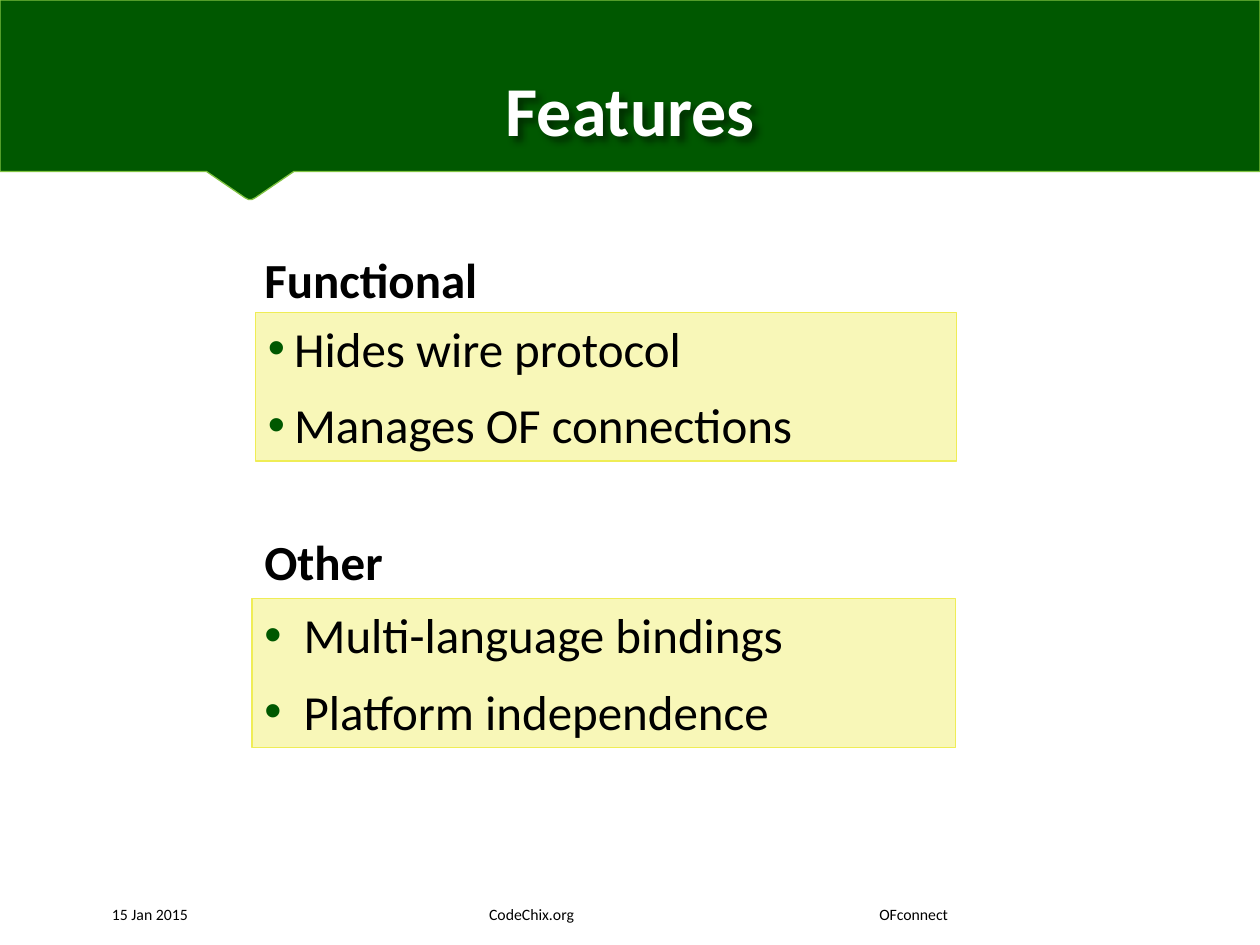
from dataclasses import dataclass

from lxml.etree import SubElement as Sub
from pptx import Presentation
from pptx.dml.color import RGBColor as Rgb
from pptx.enum.shapes import MSO_SHAPE as Kind
from pptx.enum.text import MSO_ANCHOR as Anchor, MSO_AUTO_SIZE as Fit, PP_ALIGN as Align
from pptx.oxml.ns import qn
from pptx.util import Pt

HUES = {"green": "005800", "lime": "80C342", "yellow": "EFED56",
        "white": "FFFFFF", "black": "000000"}
FACE = "Calibri"


@dataclass
class Group:
    head: str
    top: float
    left: float
    box_top: float
    width: float
    indent: float
    items: tuple[str, ...]


GROUPS = (
    Group("Functional", 139, 146, 178.5, 400.5, 15,
          ("Hides wire protocol", "Manages OF connections")),
    Group("Other", 300, 144, 342, 402, 22.5,
          ("Multi-language bindings", "Platform independence")),
)


def hue(name: str) -> Rgb:
    return Rgb.from_string(HUES[name])


def style(para, size: float, tint: str = "black", bold: bool = False) -> None:
    font = para.font
    font.name, font.size, font.bold = FACE, Pt(size), bold
    font.color.rgb = hue(tint)


def paint(shape, fill: str, line: str) -> None:
    shape.shadow.inherit = False
    shape.fill.solid()
    shape.fill.fore_color.rgb = hue(fill)
    shape.line.color.rgb = hue(line)
    shape.line.width = Pt(0.75)


def add_text(slide, text: str, left: float, top: float, width: float, height: float):
    box = slide.shapes.add_textbox(Pt(left), Pt(top), Pt(width), Pt(height))
    box.text_frame.word_wrap = True
    box.text_frame.text = text
    return box


def set_flush(frame) -> None:
    """Remove the insets and seat the text at the bottom."""
    frame.margin_left = frame.margin_right = frame.margin_top = frame.margin_bottom = 0
    frame.vertical_anchor = Anchor.BOTTOM


def add_banner(slide) -> None:
    points = ((0, 0), (0, 98.5), (118, 98.5), (140.5, 113), (142.5, 113.8),
              (144, 113.8), (145.5, 113), (168, 98.5), (720, 98.5))
    pen = slide.shapes.build_freeform(720, 0, scale=Pt(1))
    pen.add_line_segments(points, close=True)
    paint(pen.convert_to_shape(), "green", "lime")


def add_title(slide, text: str) -> None:
    box = add_text(slide, text, 64, 9.5, 592.5, 76.5)
    set_flush(box.text_frame)
    para = box.text_frame.paragraphs[0]
    para.alignment = Align.CENTER
    style(para, 40, "white", True)
    # Soft shadow below the letters
    effect = Sub(box._element.spPr, qn("a:effectLst"))
    shade = Sub(effect, qn("a:outerShdw"), blurRad=str(Pt(4)), dist=str(Pt(3)),
                dir="2700000", algn="tl", rotWithShape="0")
    tint = Sub(shade, qn("a:srgbClr"), val=HUES["black"])
    Sub(tint, qn("a:alpha"), val="45000")


def add_bullet(para, text: str, indent: float) -> None:
    para.text = text
    para.alignment = Align.LEFT
    para.space_after = Pt(10)
    props = para._p.get_or_add_pPr()
    props.set("marL", str(Pt(indent)))
    props.set("indent", str(-Pt(indent)))
    Sub(Sub(props, qn("a:buClr")), qn("a:srgbClr"), val=HUES["green"])
    Sub(props, qn("a:buFont"), typeface="Arial")
    Sub(props, qn("a:buChar"), char="•")
    style(para, 28)


def add_group(slide, group: Group) -> None:
    box = slide.shapes.add_shape(Kind.RECTANGLE, Pt(group.left), Pt(group.box_top),
                                 Pt(group.width), Pt(85))
    paint(box, "yellow", "yellow")
    tint = box._element.spPr.find(qn("a:solidFill"))[0]
    Sub(tint, qn("a:alpha"), val="42000")
    frame = box.text_frame
    frame.word_wrap = True
    frame.auto_size = Fit.SHAPE_TO_FIT_TEXT
    frame.vertical_anchor = Anchor.TOP
    for i, item in enumerate(group.items):
        para = frame.add_paragraph() if i else frame.paragraphs[0]
        add_bullet(para, item, group.indent)

    head = add_text(slide, group.head, 144, group.top, 400, 41)
    head.text_frame.auto_size = Fit.SHAPE_TO_FIT_TEXT
    style(head.text_frame.paragraphs[0], 28, bold=True)


def add_footer(slide, parts: tuple[str, ...], stops: tuple[float, ...]) -> None:
    box = add_text(slide, "\t".join(parts), 64, 510, 495.5, 18)
    set_flush(box.text_frame)
    para = box.text_frame.paragraphs[0]
    tabs = Sub(para._p.get_or_add_pPr(), qn("a:tabLst"))
    for stop in stops:
        Sub(tabs, qn("a:tab"), pos=str(Pt(stop)), algn="l")
    style(para, 9)


def main() -> None:
    deck = Presentation()
    deck.slide_width, deck.slide_height = Pt(720), Pt(540)
    slide = deck.slides.add_slide(deck.slide_layouts[6])

    # Header
    add_banner(slide)
    add_title(slide, "Features")

    # Feature groups
    for group in GROUPS:
        add_group(slide, group)

    # Footer
    add_footer(slide, ("15 Jan 2015", "CodeChix.org", "OFconnect"), (215.5, 438.5))
    deck.save("out.pptx")


if __name__ == "__main__":
    main()
